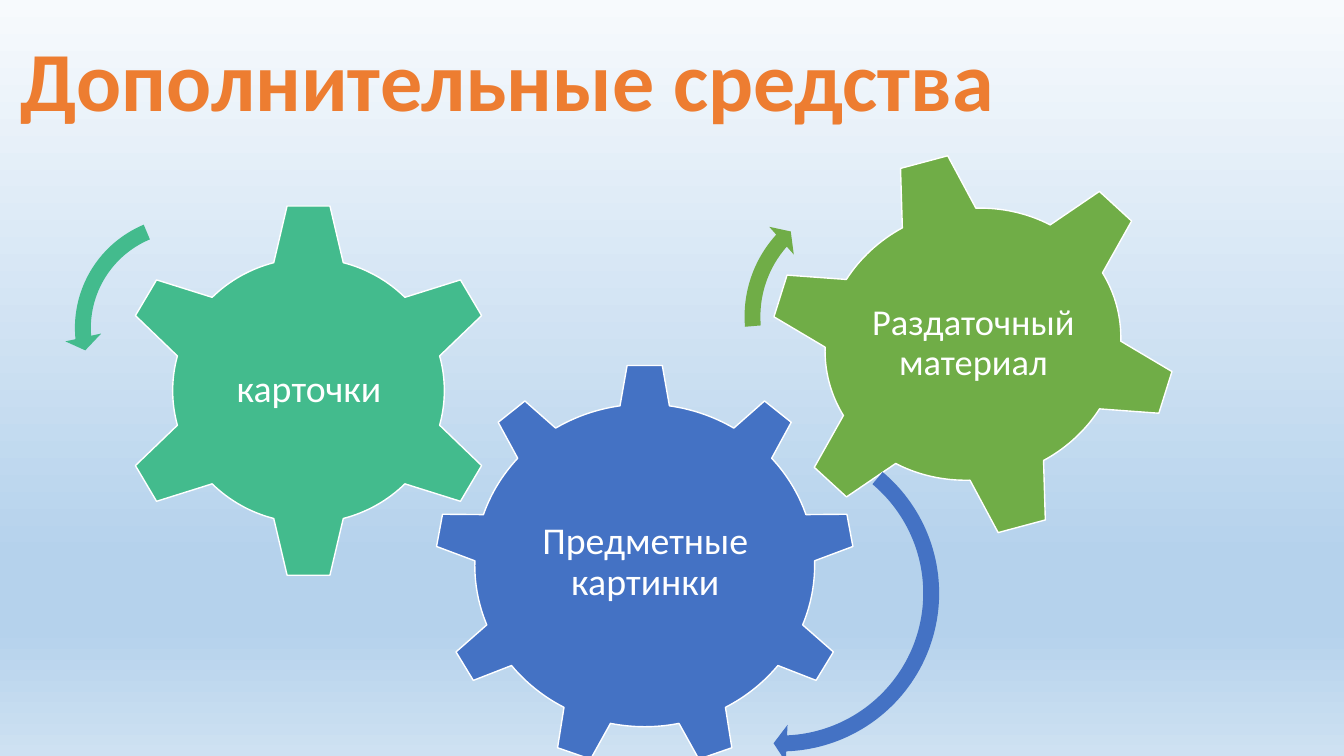
"""Build a slide with three labelled gears and their turning arrows."""
from dataclasses import dataclass

from lxml import etree
from pptx import Presentation
from pptx.dml.color import RGBColor
from pptx.enum.shapes import MSO_SHAPE
from pptx.enum.text import MSO_ANCHOR, MSO_AUTO_SIZE, PP_ALIGN
from pptx.oxml.ns import qn
from pptx.util import Inches, Pt

GEAR_6 = MSO_SHAPE.GEAR_6
GEAR_9 = MSO_SHAPE.GEAR_9
CLOCKWISE = MSO_SHAPE.CIRCULAR_ARROW
COUNTERCLOCKWISE = MSO_SHAPE.LEFT_CIRCULAR_ARROW
MIDDLE = MSO_ANCHOR.MIDDLE
NO_AUTOFIT = MSO_AUTO_SIZE.NONE
LEFT = PP_ALIGN.LEFT
CENTER = PP_ALIGN.CENTER

FONT = "Calibri"
COLORS = {
    "title": "ED7D31",
    "blue": "4472C4",
    "teal": "43BB8D",
    "green": "70AD47",
    "white": "FFFFFF",
}
BACKGROUND = {0: "F7FAFD", 74: "B5D2EC", 83: "B5D2EC", 100: "CEE1F2"}
ADJ_PER_DEGREE = 0.6

Box = tuple[float, float, float, float]


@dataclass
class Gear:
    """A gear with its label."""
    kind: MSO_SHAPE
    box: Box
    color: str
    label: str
    label_box: Box
    size: int
    rotation: float = 0


@dataclass
class TurnArrow:
    """A circular arrow; widths are in percent and angles in degrees."""
    kind: MSO_SHAPE
    box: Box
    color: str
    band: float
    head_angle: float
    end: float
    start: float
    head_width: float
    rotation: float = 0


GEARS = [
    Gear(GEAR_9, (4.31, 3.61, 4.17, 4), "blue",
         "Предметные картинки", (5.14, 4.55, 2.52, 2.06), 27),
    Gear(GEAR_6, (1.15, 2, 3.82, 3.75), "teal",
         "карточки", (2.11, 2.95, 1.91, 1.85), 27),
    Gear(GEAR_6, (7.6, 1.5, 4.1, 3.83), "green",
         "Раздаточный материал", (8.52, 2.32, 2.27, 2.18), 26, 345),
]
ARROWS = [
    TurnArrow(CLOCKWISE, (6.07, 4.21, 3.35, 3.35), "blue",
              4.7, 4.98, 42, 264.22, 5.5, 45.8),
    TurnArrow(COUNTERCLOCKWISE, (0.64, 2.04, 2.43, 2.43), "teal",
              6.5, 7.17, 174.82, 247.3, 7.5),
    TurnArrow(CLOCKWISE, (7.28, 1.83, 2.62, 2.62), "green",
              6, 6.57, 221.9, 175.14, 7),
]


def rgb(name: str) -> RGBColor:
    """Return a named colour."""
    return RGBColor.from_string(COLORS[name])


def paint_background(s) -> None:
    """Fill the slide with the vertical gradient."""
    fill = s.background.fill
    fill.gradient()
    fill.gradient_angle = 270
    stops = s.element.find(".//" + qn("a:gsLst"))
    for stop in list(stops):
        stops.remove(stop)
    for percent, color in BACKGROUND.items():
        stop = etree.SubElement(stops, qn("a:gs"), pos=str(percent * 1000))
        etree.SubElement(stop, qn("a:srgbClr"), val=color)


def write(tf, text: str, size: int, color: str, align: PP_ALIGN,
          bold: bool = False) -> None:
    """Put one formatted paragraph into a text frame."""
    tf.word_wrap = True
    tf.auto_size = NO_AUTOFIT
    tf.vertical_anchor = MIDDLE
    p = tf.paragraphs[0]
    p.alignment = align
    p.line_spacing = 0.9
    r = p.add_run()
    r.text = text
    r.font.name = FONT
    r.font.size = Pt(size)
    r.font.bold = bold
    r.font.color.rgb = rgb(color)


def add_title(s, text: str) -> None:
    """Place and fill the title placeholder."""
    sp = s.shapes.title
    sp.left, sp.top, sp.width, sp.height = map(Inches, (0.1, 0.11, 11.5, 1.45))
    write(sp.text_frame, text, 60, "title", LEFT, True)


def add_solid(s, item: Gear | TurnArrow):
    """Add a flat, filled preset shape."""
    sp = s.shapes.add_shape(item.kind, *map(Inches, item.box))
    sp.rotation = item.rotation
    sp.shadow.inherit = False
    sp.fill.solid()
    sp.fill.fore_color.rgb = rgb(item.color)
    return sp


def add_gear(s, gear: Gear) -> None:
    """Add a gear and its upright label."""
    sp = add_solid(s, gear)
    sp.line.color.rgb = rgb("white")
    sp.line.width = Pt(1)
    tf = s.shapes.add_textbox(*map(Inches, gear.label_box)).text_frame
    tf.margin_left = tf.margin_right = Inches(0.04)
    tf.margin_top = tf.margin_bottom = Inches(0.04)
    write(tf, gear.label, gear.size, "white", CENTER)


def add_arrow(s, arrow: TurnArrow) -> None:
    """Add a turning arrow without an outline."""
    sp = add_solid(s, arrow)
    sp.line.fill.background()
    angles = (arrow.head_angle, arrow.end, arrow.start)
    values = [arrow.band / 100, *(a * ADJ_PER_DEGREE for a in angles),
              arrow.head_width / 100]
    for i, value in enumerate(values):
        sp.adjustments[i] = value


def main() -> None:
    """Build and save the presentation."""
    prs = Presentation()
    prs.slide_width, prs.slide_height = Inches(13.33), Inches(7.5)
    s = prs.slides.add_slide(prs.slide_layouts[5])
    paint_background(s)
    add_title(s, "Дополнительные средства")
    for gear in GEARS:
        add_gear(s, gear)
    for arrow in ARROWS:
        add_arrow(s, arrow)
    prs.save("out.pptx")


if __name__ == "__main__":
    main()
